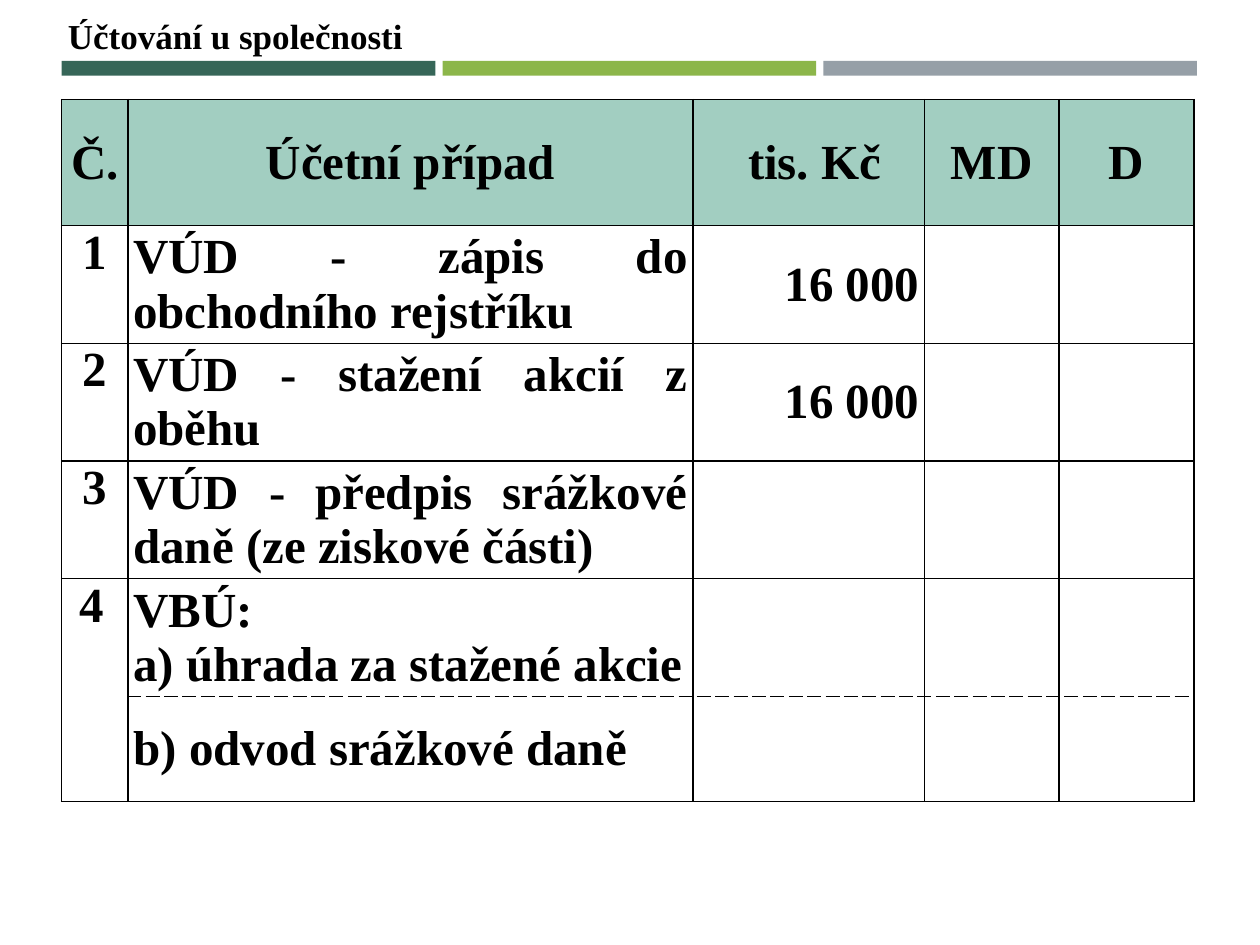
from lxml import etree
from pptx import Presentation
from pptx.dml.color import RGBColor
from pptx.enum.shapes import MSO_SHAPE
from pptx.enum.text import MSO_ANCHOR, MSO_AUTO_SIZE, PP_ALIGN
from pptx.oxml.ns import qn
from pptx.util import Pt

RECTANGLE = MSO_SHAPE.RECTANGLE
TOP, MIDDLE = MSO_ANCHOR.TOP, MSO_ANCHOR.MIDDLE
LEFT, CENTER, RIGHT, JUSTIFY = PP_ALIGN.LEFT, PP_ALIGN.CENTER, PP_ALIGN.RIGHT, PP_ALIGN.JUSTIFY
FIT_SHAPE = MSO_AUTO_SIZE.SHAPE_TO_FIT_TEXT

BLACK = RGBColor(0x00, 0x00, 0x00)
HEADER_GREEN = RGBColor(0xA2, 0xCE, 0xC1)
BAR_COLORS = [
    RGBColor(0x36, 0x66, 0x58),
    RGBColor(0x8C, 0xB6, 0x4A),
    RGBColor(0x96, 0x9F, 0xA7),
]
FONT = "Times New Roman"

COLUMN_WIDTHS = [38, 322.7, 132.3, 77, 77]
ROW_HEIGHTS = [72, 67.2, 67.2, 67.2, 67.2, 60.2]
ENTRIES = [
    ["Č.", "Účetní případ", " tis. Kč", "MD", "D"],
    ["1", "VÚD - zápis do obchodního rejstříku", "16 000", "", ""],
    ["2", "VÚD - stažení akcií z oběhu", "16 000", "", ""],
    ["3", "VÚD - předpis srážkové daně (ze ziskové části)", "", "", ""],
    [" 4", "VBÚ:\na) úhrada za stažené akcie", "", "", ""],
    ["", "b) odvod srážkové daně", "", "", ""],
]
BODY_ALIGNMENTS = [CENTER, JUSTIFY, RIGHT, CENTER, CENTER]
SPLIT_ROW = 4


def style_text(frame, size, alignment):
    for para in frame.paragraphs:
        para.alignment = alignment
        para.font.name = FONT
        para.font.size = Pt(size)
        para.font.bold = True
        para.font.color.rgb = BLACK


def add_bar(page, left, color):
    bar = page.shapes.add_shape(RECTANGLE, Pt(left), Pt(34.8), Pt(213.5), Pt(8.4))
    bar.shadow.inherit = False
    bar.fill.solid()
    bar.fill.fore_color.rgb = color
    bar.line.fill.background()


def add_title(page, text):
    box = page.shapes.add_textbox(Pt(31.7), Pt(5), Pt(207.4), Pt(31.5))
    frame = box.text_frame
    frame.word_wrap = False
    frame.auto_size = FIT_SHAPE
    frame.text = text
    style_text(frame, 20, LEFT)


def add_border(cell, side, dash):
    properties = cell._tc.get_or_add_tcPr()
    line = etree.SubElement(properties, qn(f"a:ln{side}"), w=str(Pt(1)))
    fill = etree.SubElement(line, qn("a:solidFill"))
    etree.SubElement(fill, qn("a:srgbClr"), val=str(BLACK))
    etree.SubElement(line, qn("a:prstDash"), val=dash)


def format_cell(cell, row, column):
    dashed_side = {SPLIT_ROW: "B", SPLIT_ROW + 1: "T"}.get(row) if column else None
    for side in "LRTB":
        add_border(cell, side, "dash" if side == dashed_side else "solid")
    if row == 0:
        cell.fill.solid()
        cell.fill.fore_color.rgb = HEADER_GREEN
    else:
        cell.fill.background()
    cell.margin_left = cell.margin_right = Pt(3)
    cell.margin_top = cell.margin_bottom = Pt(0)
    cell.vertical_anchor = TOP if row and column == 0 else MIDDLE


def cell_alignment(row, column):
    if row == 0:
        return CENTER
    if row == SPLIT_ROW and column == 0:
        return LEFT
    return BODY_ALIGNMENTS[column]


def add_entry_table(page):
    table = page.shapes.add_table(
        len(ROW_HEIGHTS), len(COLUMN_WIDTHS), Pt(35.2), Pt(56.9),
        Pt(sum(COLUMN_WIDTHS)), Pt(sum(ROW_HEIGHTS)),
    ).table
    table.first_row = False
    table.horz_banding = False
    for column, width in zip(table.columns, COLUMN_WIDTHS):
        column.width = Pt(width)
    for row, height in zip(table.rows, ROW_HEIGHTS):
        row.height = Pt(height)
    for row, texts in enumerate(ENTRIES):
        for column, text in enumerate(texts):
            cell = table.cell(row, column)
            format_cell(cell, row, column)
            if text:
                cell.text = text
                style_text(cell.text_frame, 28, cell_alignment(row, column))
    table.cell(SPLIT_ROW, 0).merge(table.cell(SPLIT_ROW + 1, 0))


def main():
    deck = Presentation()
    deck.slide_width, deck.slide_height = Pt(720), Pt(540)
    page = deck.slides.add_slide(deck.slide_layouts[6])
    for index, color in enumerate(BAR_COLORS):
        add_bar(page, 35.3 + index * 217.6, color)
    add_title(page, "Účtování u společnosti")
    add_entry_table(page)
    deck.save("out.pptx")


if __name__ == "__main__":
    main()
